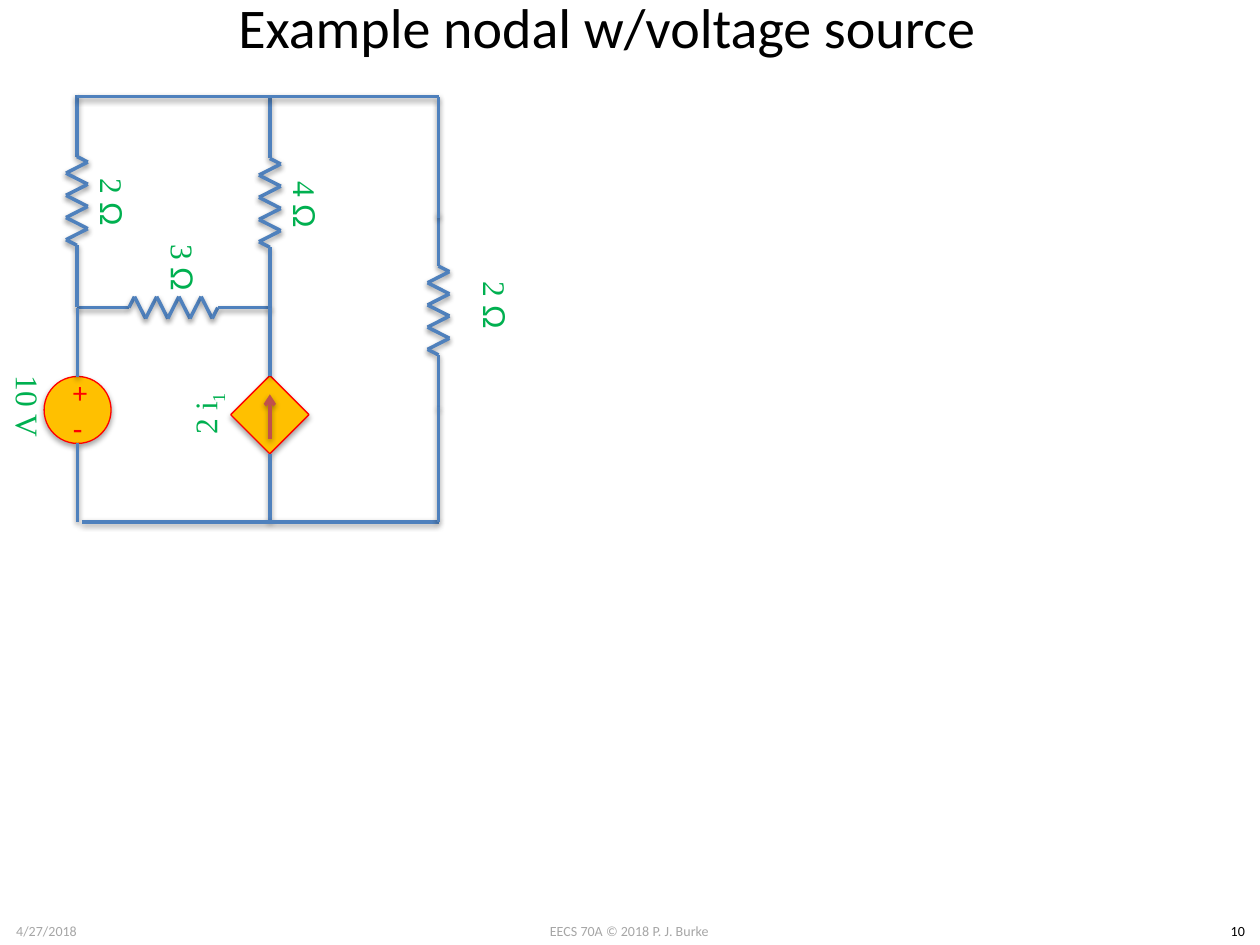
from lxml.etree import SubElement
from pptx import Presentation
from pptx.dml.color import RGBColor
from pptx.enum.shapes import MSO_CONNECTOR as Link, MSO_SHAPE as Preset
from pptx.enum.text import MSO_ANCHOR as Anchor, PP_ALIGN as Align
from pptx.oxml.ns import qn
from pptx.util import Cm, Pt

BLUE, BRICK, GREEN, RED, GOLD = "4F81BD", "C0504D", "00B050", "FF0000", "FFC000"
GREY, BLACK = "A6A6A6", "000000"
SERIF, SANS, SYMBOL = "Times New Roman", "Calibri", "Arial"

# Circuit grid in centimetres: three branches between two rails
LEFT, MIDDLE, RIGHT = 1.55, 5.44, 8.84
TOP, NODE, BOTTOM = 1.95, 6.2, 10.52


def color(hex_code):
    return RGBColor.from_string(hex_code)


def add_shadow(part, opacity, distance):
    """Give a part a soft shadow straight below it."""
    effects = SubElement(part._element.spPr, qn("a:effectLst"))
    shadow = SubElement(effects, qn("a:outerShdw"), blurRad="40000",
                        dist=str(distance), dir="5400000", rotWithShape="0")
    shade = SubElement(shadow, qn("a:srgbClr"), val=BLACK)
    SubElement(shade, qn("a:alpha"), val=str(opacity * 1000))


def add_wire(shapes, start, end, hex_code=BLUE, arrow=False):
    wire = shapes.add_connector(Link.STRAIGHT, *map(Cm, start + end))
    wire.line.color.rgb = color(hex_code)
    wire.line.width = Pt(2)
    if arrow:
        SubElement(wire.line._get_or_add_ln(), qn("a:tailEnd"), type="arrow")
    add_shadow(wire, 38, 20000)


def add_text(shapes, box, spans, size, hex_code, rotation=0):
    """Add centred text; spans are (text, font) pairs."""
    frame_box = shapes.add_textbox(*map(Cm, box))
    frame_box.rotation = rotation
    frame = frame_box.text_frame
    frame.word_wrap = False
    frame.vertical_anchor = Anchor.MIDDLE
    frame.margin_left = frame.margin_right = frame.margin_top = frame.margin_bottom = 0
    para = frame.paragraphs[0]
    para.alignment = Align.CENTER
    for text, font in spans:
        span = para.add_run()
        span.text = text
        span.font.name = font
        span.font.size = Pt(size)
        span.font.color.rgb = color(hex_code)
    return para


def add_label(shapes, center, spans, rotation=90):
    width, height = 3.02, 1.85
    box = (center[0] - width / 2, center[1] - height / 2, width, height)
    return add_text(shapes, box, spans, 18, GREEN, rotation)


def add_resistor(page, start, length, ohms, label_center, horizontal=False):
    """Draw leads and an eight-peak zigzag in the middle of the given length."""
    shapes = page.shapes.add_group_shape().shapes
    body, peaks, swing = 1.79, 8, 0.22
    lead, pitch = (length - body) / 2, body / peaks

    def place(along, side):
        if horizontal:
            return start[0] + along, start[1] - side
        return start[0] + side, start[1] + along

    points = [place(0, 0), place(lead, 0)]
    points += [place(lead + (i + 0.5) * pitch, swing * (-1) ** i) for i in range(peaks)]
    points += [place(lead + body, 0), place(length, 0)]
    for first, second in zip(points, points[1:]):
        add_wire(shapes, first, second)
    add_label(shapes, label_center, [(f"{ohms} ", SERIF), ("Ω", SYMBOL)])


def add_source_body(shapes, preset, box):
    body = shapes.add_shape(preset, *map(Cm, box))
    body.fill.solid()
    body.fill.fore_color.rgb = color(GOLD)
    body.line.color.rgb = color(RED)
    body.line.width = Pt(0.75)
    add_shadow(body, 35, 23000)
    return body


def add_voltage_source(page, box):
    left, top, width, height = box
    center = left + width / 2
    shapes = page.shapes.add_group_shape().shapes
    add_source_body(shapes, Preset.OVAL, box)
    for sign, size, x, y in (("+", 16.6, 0.05, -0.12), ("-", 18, 0, 0.62)):
        add_text(shapes, (center - 0.33 + x, top + y, 0.66, 0.84), [(sign, SANS)], size, RED)
    add_wire(shapes, (center, BOTTOM), (center, top + height))
    add_wire(shapes, (center, top), (center, NODE))
    add_label(page.shapes, (center - 0.99, top + 0.6), [("10 V", SERIF)])


def add_current_source(page, box):
    left, top, width, height = box
    center, middle = left + width / 2, top + height / 2
    side = width / 2 ** 0.5
    shapes = page.shapes.add_group_shape().shapes
    square = (center - side / 2, middle - side / 2, side, side)
    add_source_body(shapes, Preset.RECTANGLE, square).rotation = 45
    add_wire(shapes, (center, top), (center, NODE))
    add_wire(shapes, (center, BOTTOM), (center, top + height))
    add_wire(shapes, (center, middle + 0.48), (center, middle - 0.41), BRICK, arrow=True)
    para = add_label(shapes, (center - 1.26, middle - 0.02),
                     [("2 i", SERIF), ("1", SERIF)], 270)
    para.runs[1].font._element.set("baseline", "-25000")


def add_circuit(page):
    # Resistors
    add_resistor(page, (RIGHT, 4.29), 3.94, 2, (9.99, 6.16))
    add_resistor(page, (LEFT, NODE), MIDDLE - LEFT, 3, (3.7, 5.4), horizontal=True)
    add_resistor(page, (LEFT, 1.91), 4.28, 2, (2.27, 4.08))
    add_resistor(page, (MIDDLE, TOP), 4.28, 4, (6.16, 4.13))
    # Sources
    add_voltage_source(page, (0.89, 7.59, 1.35, 1.35))
    add_current_source(page, (4.65, 7.57, 1.58, 1.58))
    # Rails and right branch
    add_wire(page.shapes, (LEFT, TOP), (RIGHT, TOP))
    add_wire(page.shapes, (1.65, BOTTOM), (RIGHT, BOTTOM))
    add_wire(page.shapes, (RIGHT, 4.39), (RIGHT, TOP))
    add_wire(page.shapes, (RIGHT, 8.2), (RIGHT, BOTTOM))


def add_title(page, box):
    title = page.shapes.title
    title.left, title.top, title.width, title.height = map(Cm, box)
    title.text_frame.text = "Example nodal w/voltage source"
    title.text_frame.vertical_anchor = Anchor.MIDDLE
    para = title.text_frame.paragraphs[0]
    para.alignment = Align.CENTER
    font = para.runs[0].font
    font.name, font.size = SANS, Pt(32)
    font.color.rgb = color(BLACK)


def add_footer(page, top, height):
    for text, left, width, hex_code in (
            ("EECS 70A © 2018 P. J. Burke", 9.73, 5.92, GREY),
            ("4/27/2018", 0, 1.88, GREY),
            ("10", 24.51, 0.89, BLACK)):
        add_text(page.shapes, (left, top, width, height), [(text, SANS)], 8, hex_code)


def main():
    deck = Presentation()
    deck.slide_width, deck.slide_height = Cm(25.4), Cm(19.05)
    page = deck.slides.add_slide(deck.slide_layouts[5])
    add_footer(page, 18.46, 0.6)
    add_title(page, (0.81, -0.76, 22.86, 2.59))
    add_circuit(page)
    deck.save("out.pptx")


if __name__ == "__main__":
    main()
